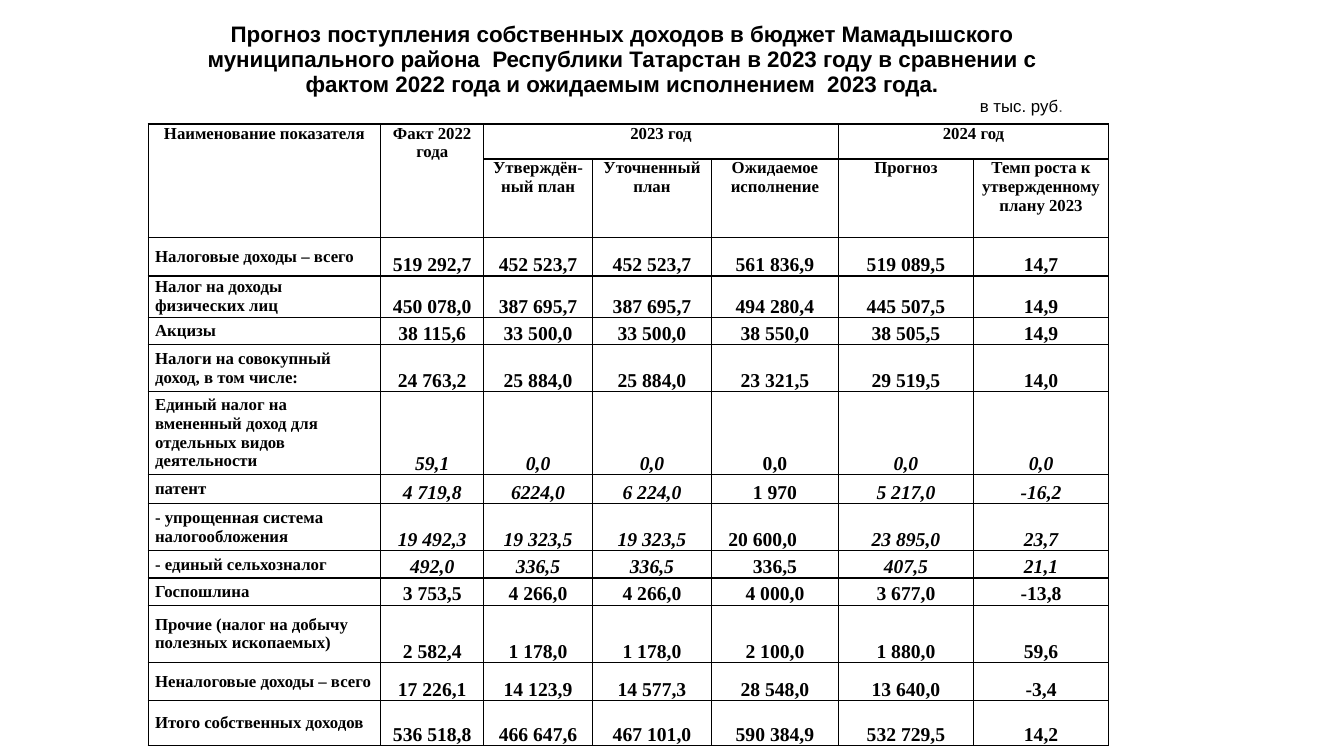
from lxml.etree import SubElement
from pptx import Presentation
from pptx.dml.color import RGBColor
from pptx.enum.text import MSO_ANCHOR, PP_ALIGN
from pptx.oxml.ns import qn
from pptx.util import Pt

BLACK = "000000"
GREY = "525252"
SERIF = "Times New Roman"
TITLE = ("Прогноз поступления собственных доходов в бюджет Мамадышского "
         "муниципального района  Республики Татарстан в 2023 году в сравнении с "
         "фактом 2022 года и ожидаемым исполнением  2023 года.")
WIDTHS = [166.3, 73.4, 77.8, 85, 90.7, 96.5, 96.5]
HEIGHTS = [25, 56.2, 27.4, 29.5, 19.4, 33.8, 59, 20.9, 33.8, 19.4, 19.4, 41, 27.4, 31.7]
# row, column, rows spanned, columns spanned, text
HEADS = [
    (0, 0, 2, 1, "Наименование показателя"),
    (0, 1, 2, 1, "Факт 2022 года"),
    (0, 2, 1, 3, "2023 год"),
    (0, 5, 1, 2, "2024 год"),
    (1, 2, 1, 1, "Утверждён-ный план"),
    (1, 3, 1, 1, "Уточненный план"),
    (1, 4, 1, 1, "Ожидаемое исполнение"),
    (1, 5, 1, 1, "Прогноз"),
    (1, 6, 1, 1, "Темп роста к утвержденному плану 2023"),
]
ROWS = [
    "Налоговые доходы – всего|519 292,7|452 523,7|452 523,7|561 836,9|519 089,5|14,7",
    "Налог на доходы физических лиц|450 078,0|387 695,7|387 695,7|494 280,4|445 507,5|14,9",
    "Акцизы|38 115,6|33 500,0|33 500,0|38 550,0|38 505,5|14,9",
    "Налоги на совокупный доход, в том числе:|24 763,2|25 884,0|25 884,0|23 321,5|29 519,5|14,0",
    "Единый налог на вмененный доход для отдельных видов деятельности"
    "|59,1|0,0|0,0|0,0|0,0|0,0",
    "патент|4 719,8|6224,0|6 224,0|1 970|5 217,0|-16,2",
    "- упрощенная система налогообложения|19 492,3|19 323,5|19 323,5|20 600,0|23 895,0|23,7",
    "- единый сельхозналог|492,0|336,5|336,5|336,5|407,5|21,1",
    "Госпошлина|3 753,5|4 266,0|4 266,0|4 000,0|3 677,0|-13,8",
    "Прочие (налог на добычу полезных ископаемых)|2 582,4|1 178,0|1 178,0|2 100,0|1 880,0|59,6",
    "Неналоговые доходы – всего|17 226,1|14 123,9|14 577,3|28 548,0|13 640,0|-3,4",
    "Итого собственных доходов|536 518,8|466 647,6|467 101,0|590 384,9|532 729,5|14,2",
]
DETAILS = range(4, 8)  # data rows set in italics
OUTLOOK = 4  # column that stays upright
LEFT_CELL = (6, OUTLOOK)  # the one figure aligned left


def color(code):
    return RGBColor.from_string(code)


def write(par, text, size=12, font=SERIF, bold=True, italic=False,
          fill=BLACK, align=PP_ALIGN.CENTER):
    par.alignment = align
    run = par.add_run()
    run.text = text
    run.font.size = Pt(size)
    run.font.name = font
    run.font.bold = bold
    run.font.italic = italic
    run.font.color.rgb = color(fill)


def pad(cell, side, top=0):
    cell.margin_left = cell.margin_right = Pt(side)
    cell.margin_top = Pt(top)
    cell.margin_bottom = 0


def frame(cell):
    props = cell._tc.get_or_add_tcPr()
    for side in ("lnL", "lnR", "lnT", "lnB"):
        line = SubElement(props, qn(f"a:{side}"), w=str(Pt(1)))
        paint = SubElement(line, qn("a:solidFill"))
        SubElement(paint, qn("a:srgbClr"), val=BLACK)


def add_grid(slide, left, top, widths, heights, side):
    """Add a plain unstyled table with unfilled cells."""
    table = slide.shapes.add_table(
        len(heights), len(widths), Pt(left), Pt(top),
        Pt(sum(widths)), Pt(sum(heights))).table
    table.first_row = table.horz_banding = False
    for column, width in zip(table.columns, widths):
        column.width = Pt(width)
    for row, height in zip(table.rows, heights):
        row.height = Pt(height)
    for cell in table.iter_cells():
        pad(cell, side)
        cell.fill.background()
    return table


def add_title(slide):
    table = add_grid(slide, 105.8, 15.1, [15.8, 643.7, 20.9], [73], 7)
    cell = table.cell(0, 1)
    pad(cell, 7, top=1)
    frame = cell.text_frame
    write(frame.paragraphs[0], TITLE, size=16, font="Arial")
    unit = frame.add_paragraph()
    write(unit, "в тыс. руб", font="Arial", bold=False, align=PP_ALIGN.RIGHT)
    write(unit, ".", font="Arial", bold=False, fill=GREY, align=PP_ALIGN.RIGHT)


def add_heads(table):
    for row, col, down, across, text in HEADS:
        cell = table.cell(row, col)
        if down * across > 1:
            cell.merge(table.cell(row + down - 1, col + across - 1))
        write(cell.text_frame.paragraphs[0], text)


def add_rows(table):
    for row, line in enumerate(ROWS):
        for col, text in enumerate(line.split("|")):
            cell = table.cell(row + 2, col)
            par = cell.text_frame.paragraphs[0]
            if col == 0:
                cell.vertical_anchor = MSO_ANCHOR.MIDDLE
                write(par, text, align=PP_ALIGN.LEFT)
                continue
            cell.vertical_anchor = MSO_ANCHOR.BOTTOM
            shifted = (row, col) == LEFT_CELL
            if shifted:
                cell.margin_left = Pt(12)
            write(par, text, size=14, italic=row in DETAILS and col != OUTLOOK,
                  align=PP_ALIGN.LEFT if shifted else PP_ALIGN.CENTER)


def main():
    deck = Presentation()
    deck.slide_width, deck.slide_height = Pt(960), Pt(540)
    slide = deck.slides.add_slide(deck.slide_layouts[6])
    add_title(slide)
    table = add_grid(slide, 105.8, 88.6, WIDTHS, HEIGHTS, 5)
    for cell in table.iter_cells():
        frame(cell)
        cell.fill.background()
    add_heads(table)
    add_rows(table)
    deck.save("out.pptx")


if __name__ == "__main__":
    main()
